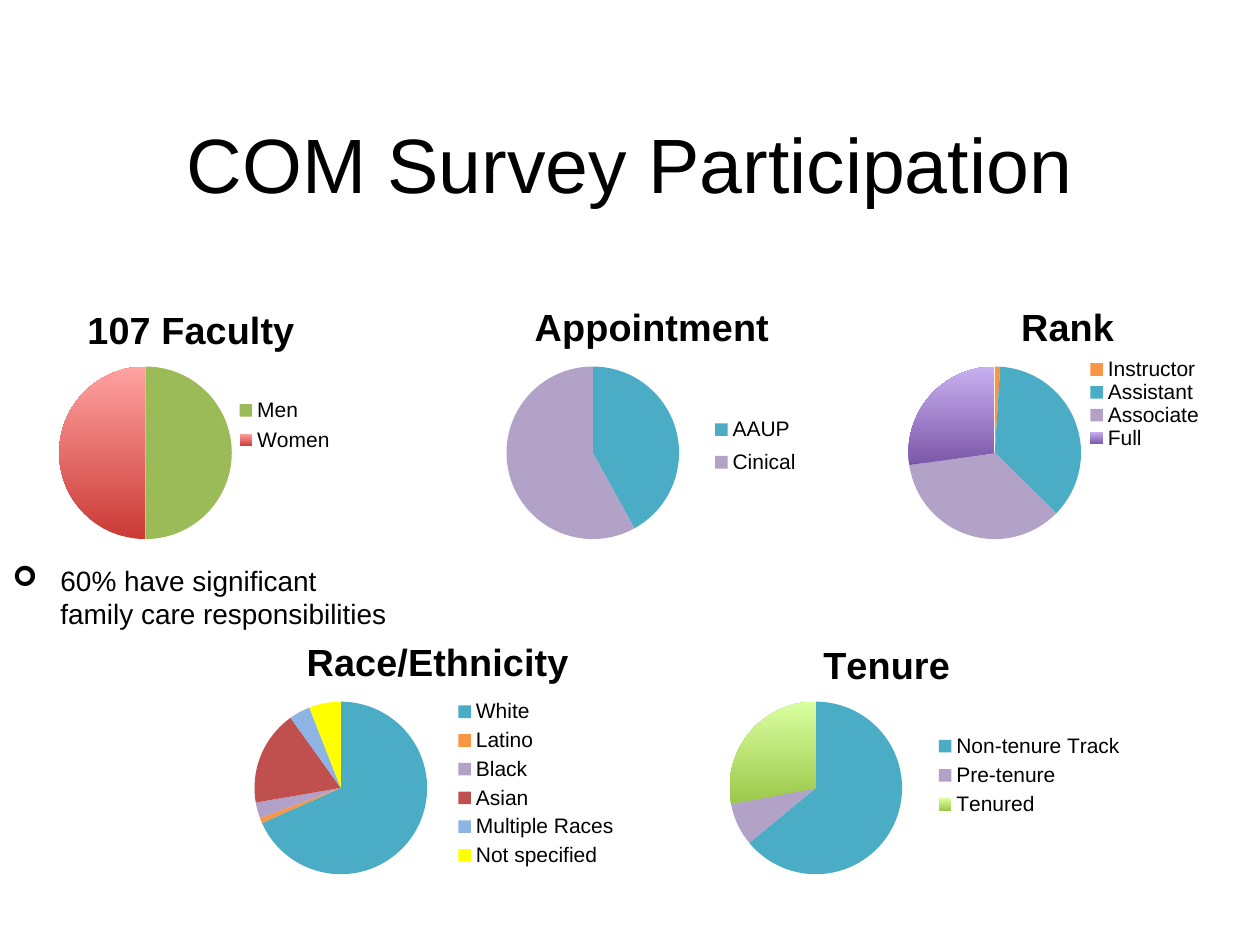
from dataclasses import dataclass

from lxml.etree import SubElement
from pptx import Presentation
from pptx.chart.data import CategoryChartData
from pptx.dml.color import RGBColor
from pptx.enum.chart import XL_CHART_TYPE as ChartType, XL_LEGEND_POSITION as LegendPosition
from pptx.enum.text import MSO_ANCHOR as Anchor, MSO_AUTO_SIZE as AutoSize, PP_ALIGN as Align
from pptx.oxml.ns import qn
from pptx.util import Inches, Pt

COLORS = {
    "text": "000000", "green": "9BBB59", "teal": "4BACC6", "lilac": "B3A2C7",
    "orange": "F79646", "red": "C0504D", "blue": "8EB4E3", "yellow": "FFFF00",
}
# Bottom and top colour of each shaded slice
GRADIENTS = {
    "red shade": ("CB3A36", "FFA2A0"),
    "purple shade": ("7B57A8", "C9B0F0"),
    "green shade": ("9BC84A", "DAFFA0"),
}
FONT = "Arial"
TOP_ROW, BOTTOM_ROW = 2.17, 4.83
CHART_HEIGHT = 2.25
PIE_TOP, PIE_SIZE = 0.74, 1.37


@dataclass
class Slice:
    label: str
    value: int
    color: str


@dataclass
class Pie:
    """Places are slide inches; the legend is left, top, width, height."""
    title: str
    left: float
    top: float
    width: float
    title_at: tuple[float, float]
    pie_left: float
    legend: tuple[float, float, float, float]
    slices: list[Slice]


PIES = [
    Pie("107 Faculty", 0.33, TOP_ROW, 2.56, (0.64, 2.37), 0.47, (1.86, 3.11, 0.8, 0.53),
        [Slice("Men", 50, "green"), Slice("Women", 50, "red shade")]),
    Pie("Rank", 6.92, TOP_ROW, 3, (8.05, 2.35), 7.21, (8.61, 2.84, 0.95, 0.73),
        [Slice("Instructor", 1, "orange"), Slice("Assistant", 36, "teal"),
         Slice("Associate", 35, "lilac"), Slice("Full", 27, "purple shade")]),
    Pie("Appointment", 3.42, TOP_ROW, 3.42, (4.19, 2.35), 4.02, (5.62, 3.24, 0.75, 0.6),
        [Slice("AAUP", 42, "teal"), Slice("Cinical", 58, "lilac")]),
    Pie("Race/Ethnicity", 1.33, BOTTOM_ROW, 4.17, (2.38, 5.01), 2.02, (3.58, 5.51, 1.35, 1.42),
        [Slice("White", 69, "teal"), Slice("Latino", 1, "orange"), Slice("Black", 3, "lilac"),
         Slice("Asian", 18, "red"), Slice("Multiple Races", 4, "blue"),
         Slice("Not specified", 6, "yellow")]),
    Pie("Tenure", 5.58, BOTTOM_ROW, 3.42, (6.48, 5.03), 5.79, (7.42, 5.78, 1.5, 0.75),
        [Slice("Non-tenure Track", 64, "teal"), Slice("Pre-tenure", 8, "lilac"),
         Slice("Tenured", 28, "green shade")]),
]


def format_font(font, size: float, bold: bool = False) -> None:
    for key, value in {"name": FONT, "size": Pt(size), "bold": bold}.items():
        setattr(font, key, value)
    font.color.rgb = RGBColor.from_string(COLORS["text"])


def place(shape, left: float, top: float, width: float, height: float) -> None:
    box = {"left": left, "top": top, "width": width, "height": height}
    for key, value in box.items():
        setattr(shape, key, Inches(value))


def set_layout(part, pie: Pie, left: float, top: float, *size: float, inner: bool = False) -> None:
    """Fix a chart part at a slide position given in inches."""
    layout = part.find(qn("c:layout"))
    if layout is None:
        layout = SubElement(part, qn("c:layout"))
        anchor = part.find(qn("c:tx"))
        if anchor is None:
            anchor = part.find(qn("c:legendPos"))
        if anchor is None:
            part.insert(0, layout)
        else:
            anchor.addnext(layout)
    for child in list(layout):
        layout.remove(child)
    manual = SubElement(layout, qn("c:manualLayout"))
    settings = {"layoutTarget": "inner"} if inner else {}
    settings |= {"xMode": "edge", "yMode": "edge"}
    shares = [(left - pie.left) / pie.width, (top - pie.top) / CHART_HEIGHT]
    shares += [length / whole for length, whole in zip(size, (pie.width, CHART_HEIGHT))]
    settings |= {key: f"{share:.4f}" for key, share in zip("xywh", shares)}
    for key, value in settings.items():
        SubElement(manual, qn(f"c:{key}")).set("val", value)


def fill_slice(fill, color: str) -> None:
    if color not in GRADIENTS:
        fill.solid()
        fill.fore_color.rgb = RGBColor.from_string(COLORS[color])
        return
    fill.gradient()
    fill.gradient_angle = 90
    for stop, shade in zip(fill.gradient_stops, GRADIENTS[color]):
        stop.color.rgb = RGBColor.from_string(shade)


def draw_pie(slide, pie: Pie) -> None:
    data = CategoryChartData()
    data.categories = [part.label for part in pie.slices]
    data.add_series("Series 1", [part.value for part in pie.slices])
    box = [Inches(length) for length in (pie.left, pie.top, pie.width, CHART_HEIGHT)]
    chart = slide.shapes.add_chart(ChartType.PIE, *box, data).chart
    format_font(chart.font, 18)

    # Chart title
    heading = chart.chart_title.text_frame
    heading.text = pie.title
    format_font(heading.paragraphs[0].runs[0].font, 21.6, bold=True)
    chart.chart_title.include_in_layout = False
    # Legend
    chart.has_legend = True
    chart.legend.position = LegendPosition.RIGHT
    chart.legend.include_in_layout = False
    format_font(chart.legend.font, 12)
    # Slices
    plot = chart.plots[0]
    plot.vary_by_categories = True
    for index, part in enumerate(pie.slices):
        point_format = plot.series[0].points[index].format
        fill_slice(point_format.fill, part.color)
        point_format.line.fill.background()
    # Positions
    root = chart.element
    set_layout(root.find(".//" + qn("c:title")), pie, *pie.title_at)
    set_layout(root.find(".//" + qn("c:legend")), pie, *pie.legend)
    set_layout(root.find(".//" + qn("c:plotArea")), pie, pie.pie_left, pie.top + PIE_TOP,
               PIE_SIZE, PIE_SIZE, inner=True)


def add_bullet(paragraph, mark: str, indent: float) -> None:
    properties = paragraph._p.get_or_add_pPr()
    properties.set("marL", str(Inches(indent)))
    properties.set("indent", str(-Inches(indent)))
    SubElement(properties, qn("a:buFont")).set("typeface", "Wingdings")
    SubElement(properties, qn("a:buChar")).set("char", mark)


def main() -> None:
    presentation = Presentation()
    presentation.slide_width, presentation.slide_height = Inches(10), Inches(7.5)
    slide = presentation.slides.add_slide(presentation.slide_layouts[1])

    # Slide title
    title = slide.shapes.title
    place(title, 0.5, 0.67, 9, 1.25)
    title.text_frame.text = "COM Survey Participation"
    title.text_frame.vertical_anchor = Anchor.MIDDLE
    title.text_frame.paragraphs[0].alignment = Align.CENTER
    format_font(title.text_frame.paragraphs[0].runs[0].font, 44)

    # Survey charts
    for pie in PIES:
        draw_pie(slide, pie)

    # Family care note
    note = slide.placeholders[1]
    place(note, 0, 4.42, 3.25, 0.83)
    note.text_frame.text = "60% have significant family care responsibilities"
    note.text_frame.auto_size = AutoSize.NONE
    paragraph = note.text_frame.paragraphs[0]
    paragraph.space_before = Pt(0)
    add_bullet(paragraph, "➢", 0.38)
    format_font(paragraph.font, 16)
    format_font(paragraph.runs[0].font, 16)

    presentation.save("out.pptx")


if __name__ == "__main__":
    main()
